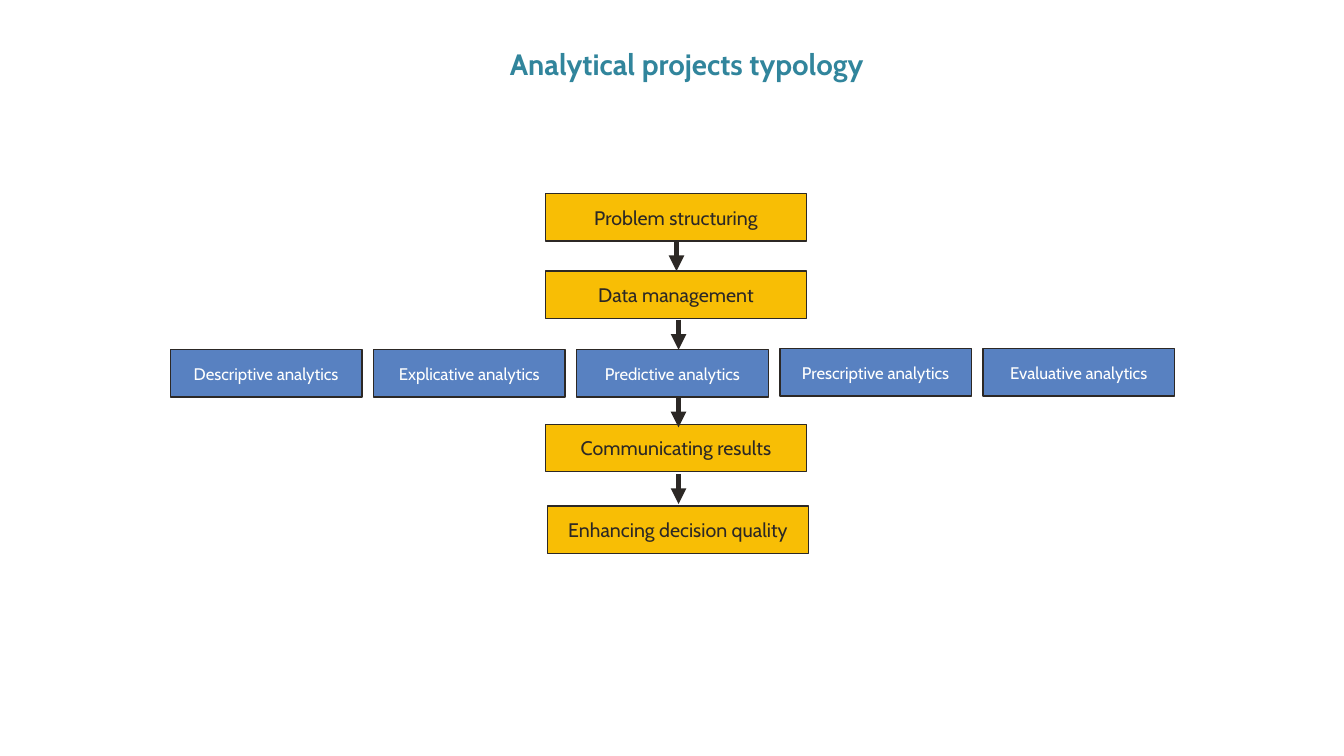
from pptx import Presentation, util as u
from pptx.dml.color import RGBColor
from pptx.enum import shapes, text
from pptx.oxml import parse_xml
from pptx.oxml.ns import nsdecls

INK = {"dark": "2C2825", "gold": "F8BE05", "blue": "5881C1",
       "white": "FFFFFE", "teal": "31859C"}
CELL = 0.1  # side of a grid cell, in inches


class Board:
    """Slide with a fine square grid; lengths are in columns and rows."""
    font = "Cabin"

    def __init__(self, deck):
        self.slide = deck.slides.add_slide(deck.slide_layouts[6])

    def grid(self, *cells):
        return [u.Inches(n * CELL) for n in cells]

    def color(self, name):
        return RGBColor.from_string(INK[name])

    def label(self, shape, words, size, tint, bold=False):
        frame = shape.text_frame
        frame.word_wrap = True
        frame.text = words
        line = frame.paragraphs[0]
        line.alignment = text.PP_ALIGN.CENTER
        font = line.runs[0].font
        font.name, font.size, font.bold = self.font, u.Pt(size), bold
        font.color.rgb = self.color(tint)

    def title(self, words, *place):
        box = self.slide.shapes.add_textbox(*self.grid(*place))
        self.label(box, words, 21, "teal", True)

    def box(self, words, place, fill, size, tint):
        box = self.slide.shapes.add_shape(
            shapes.MSO_SHAPE.RECTANGLE, *self.grid(*place))
        box.shadow.inherit = False
        box.fill.solid()
        box.fill.fore_color.rgb = self.color(fill)
        box.line.color.rgb = self.color("dark")
        box.line.width = u.Pt(1)
        box.text_frame.vertical_anchor = text.MSO_ANCHOR.MIDDLE
        self.label(box, words, size, tint)

    def arrow(self, col, row, span):
        link = self.slide.shapes.add_connector(
            shapes.MSO_CONNECTOR.STRAIGHT,
            *self.grid(col, row, col, row + span))
        link.line.color.rgb = self.color("dark")
        link.line.width = u.Pt(3.75)
        props = link._element.spPr
        props.ln.append(
            parse_xml(f'<a:tailEnd {nsdecls("a")} type="triangle"/>'))
        props.append(parse_xml(f'<a:effectLst {nsdecls("a")}/>'))


def main():
    deck = Presentation()
    deck.slide_width, deck.slide_height = u.Inches(13.33), u.Inches(7.5)
    board = Board(deck)
    tall = 4.7

    # Title
    board.title("Analytical projects typology", 44.8, 4.1, 46.6, 4.5)

    # Process steps
    steps = [("Problem structuring", 54.1, 19.2),
             ("Data management", 54.1, 26.9),
             ("Communicating results", 54.1, 42.1),
             ("Enhancing decision quality", 54.3, 50.2)]
    for words, col, row in steps:
        board.box(words, (col, row, 25.9, tall), "gold", 14, "dark")

    # Kinds of analytics, the last two set slightly higher
    kinds = ["Descriptive", "Explicative", "Predictive",
             "Prescriptive", "Evaluative"]
    for i, kind in enumerate(kinds):
        row = 34.7 if i < 3 else 34.6
        board.box(f"{kind} analytics", (16.9 + 20.15 * i, row, 19, tall),
                  "blue", 12, "white")

    # Arrows between the steps
    for col, row in [(67.1, 23.9), (67.3, 31.7), (67.3, 39.4), (67.3, 47)]:
        board.arrow(col, row, 3)

    deck.save("out.pptx")


if __name__ == "__main__":
    main()
